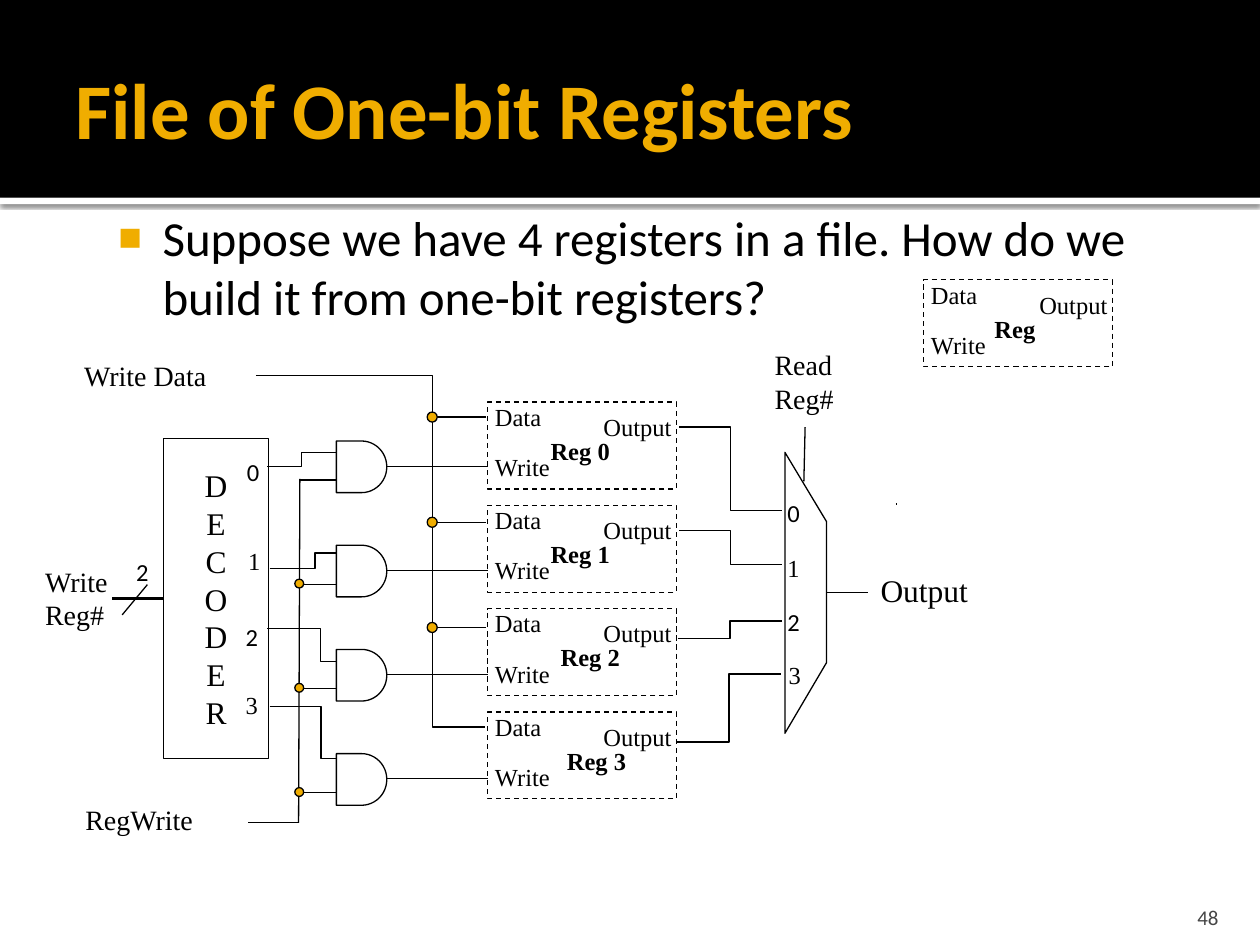
"""Build the slide on a file of four one-bit registers."""
from lxml.etree import SubElement
from pptx import Presentation
from pptx.dml.color import RGBColor
from pptx.enum.dml import MSO_LINE
from pptx.enum.shapes import MSO_CONNECTOR, MSO_SHAPE
from pptx.enum.text import MSO_ANCHOR, MSO_AUTO_SIZE, PP_ALIGN
from pptx.oxml.ns import qn
from pptx.util import Inches, Pt

BLACK, WHITE, GOLD, GREY = "000000", "FFFFFF", "F0AD00", "454545"
SERIF, SANS = "Times New Roman", "Calibri"
LEFT, MID, RIGHT = PP_ALIGN.LEFT, PP_ALIGN.CENTER, PP_ALIGN.RIGHT


def paint(fill, color):
    fill.solid()
    fill.fore_color.rgb = RGBColor.from_string(color)


def write(frame, text, size, font=SERIF, color=BLACK, bold=False, align=LEFT):
    for i, line in enumerate(text.split("\n")):
        para = frame.paragraphs[0] if i == 0 else frame.add_paragraph()
        para.alignment = align
        run = para.add_run()
        run.text = line
        run.font.size = Pt(size)
        run.font.name = font
        run.font.bold = bold
        paint(run.font.fill, color)


deck = Presentation()
deck.slide_width, deck.slide_height = Inches(10), Inches(7.5)
slide = deck.slides.add_slide(deck.slide_layouts[1])
shapes = slide.shapes
title, body = slide.placeholders

for top, high, color in [(0, 1.57, BLACK), (1.57, 0.05, WHITE)]:
    band = shapes.add_shape(MSO_SHAPE.RECTANGLE, 0, Inches(top), Inches(10), Inches(high))
    paint(band.fill, color)
    band.line.fill.background()
    band.shadow.inherit = False
    shapes._spTree.insert(2, band._element)
glow = SubElement(band._element.spPr.find(qn("a:effectLst")), qn("a:outerShdw"),
                  blurRad=str(Pt(2.5)), dist=str(Pt(0.8)), dir="5400000")
tint = SubElement(glow, qn("a:srgbClr"), val=BLACK)
SubElement(tint, qn("a:alpha"), val="60000")

title.left, title.top, title.width, title.height = [Inches(v) for v in (0.5, 0.17, 9, 1.37)]
title.text_frame.margin_right = Inches(0.05)
title.text_frame.vertical_anchor = MSO_ANCHOR.MIDDLE
write(title.text_frame, "File of One-bit Registers", 45, SANS, GOLD, True)

body.left, body.top, body.width, body.height = [Inches(v) for v in (0.75, 1.55, 8.5, 1.09)]
body.text_frame.margin_left = Inches(0.06)
body.text_frame.margin_top = Inches(0.1)
write(body.text_frame, "Suppose we have 4 registers in a file. How do we build it from one-bit registers?", 28, SANS)
para = body.text_frame.paragraphs[0]
para.space_before = Pt(0)
props = para._p.get_or_add_pPr()
props.set("marL", str(Inches(0.48)))
props.set("indent", str(Inches(-0.35)))
SubElement(SubElement(props, qn("a:buClr")), qn("a:srgbClr"), val=GOLD)
SubElement(props, qn("a:buSzPct"), val="80000")
SubElement(props, qn("a:buChar"), char="■")

labels = [
    (6.89, 4.48, 0.9, 0.4, "Output", 18, False, LEFT),
    (6.05, 2.71, 0.67, 0.64, "Read\nReg#", 16, False, LEFT),
    (0.26, 4.43, 0.71, 0.64, "Write\nReg#", 16, False, LEFT),
    (0.57, 2.8, 1.18, 0.37, "Write Data", 16, False, LEFT),
    (0.58, 6.32, 1.07, 0.37, "RegWrite", 16, False, LEFT),
]
boxes = [(MSO_SHAPE.RECTANGLE, 1.3, 3.48, 0.83, 2.54, None, None)]
wires = [
    (7.11, 4, 7.12, 4, 0.75), (6.38, 3.82, 6.39, 3.39, 0.75), (6.56, 4.7, 6.89, 4.7, 0.75),
    (1.3, 4.75, 0.89, 4.75, 2.25), (1.17, 4.64, 0.97, 4.88, 0.75),
    (2.38, 3.8, 2.37, 6.53, 0.75), (2.37, 6.53, 1.97, 6.53, 0.75),
]
regs = [(3.87, 3.19 + 0.82 * i, f"Reg {i}", dx, 0.67) for i, dx in enumerate([0.4, 0.4, 0.48, 0.53])]
regs.append((7.33, 2.22, "Reg", 0.44, 0.57))
for x, y, name, dx, wide in regs:
    boxes.append((MSO_SHAPE.RECTANGLE, x, y, 1.5, 0.69, None, MSO_LINE.DASH))
    labels += [
        (x - 0.04, y - 0.05, 0.57, 0.33, "Data", 14, False, LEFT),
        (x - 0.04, y + 0.35, 0.64, 0.33, "Write", 14, False, LEFT),
        (x + 0.82, y + 0.03, 0.74, 0.33, "Output", 14, False, LEFT),
        (x + dx, y + 0.22, wide, 0.33, name, 14, True, MID),
    ]

for i in range(4):
    y = 3.5 + 0.827 * i
    boxes.append((MSO_SHAPE.FLOWCHART_DELAY, 2.67, y, 0.4, 0.41, None, None))
    wires += [(3.07, y + 0.2, 3.87, y + 0.2, 0.75), (2.67, y + 0.31, 2.38, y + 0.31, 0.75)]
    if i:
        boxes.append((MSO_SHAPE.OVAL, 2.34, y + 0.27, 0.07, 0.07, GOLD, None))
    if i < 3:
        y = 3.31 + 0.835 * i
        wires.append((3.43, y, 3.86, y, 0.75))
        boxes.append((MSO_SHAPE.OVAL, 3.39, y - 0.04, 0.08, 0.08, GOLD, None))

bends = [
    (5.39, 3.39, 6.21, 4.05, 0.5), (5.39, 4.21, 6.21, 4.48, 0.5),
    (5.38, 5.07, 6.21, 4.93, 0.5), (5.37, 5.89, 6.2, 5.35, 0.5),
    (2.03, 2.98, 3.85, 5.77, 0.77),
    (2.12, 3.7, 2.67, 3.59, 0.5), (2.14, 4.51, 2.67, 4.39, 0.68),
    (2.12, 4.99, 2.67, 5.25, 0.77), (2.14, 5.61, 2.67, 6.02, 0.77),
]
paths = [(MSO_CONNECTOR.STRAIGHT, *wire, None) for wire in wires]
paths += [(MSO_CONNECTOR.ELBOW, *bend[:4], 0.75, bend[4]) for bend in bends]
for kind, *ends, width, turn in paths:
    link = shapes.add_connector(kind, *[Inches(v) for v in ends])
    paint(link.line.fill, BLACK)
    link.line.width = Pt(width)
    SubElement(link._element.spPr, qn("a:effectLst"))
    if turn:
        guides = link._element.spPr.find(qn("a:prstGeom")).find(qn("a:avLst"))
        SubElement(guides, qn("a:gd"), name="adj1", fmla=f"val {round(turn * 100000)}")

pen = shapes.build_freeform(Inches(6.23), Inches(5.82))
pen.add_line_segments([(Inches(x), Inches(y)) for x, y in [(6.56, 5.26), (6.56, 4.14), (6.23, 3.59)]])
forms = [(pen.convert_to_shape(), None, None)]
for kind, *place, color, dash in boxes:
    forms.append((shapes.add_shape(kind, *[Inches(v) for v in place]), color, dash))
for form, color, dash in forms:
    form.shadow.inherit = False
    if color:
        paint(form.fill, color)
    else:
        form.fill.background()
    paint(form.line.fill, BLACK)
    form.line.width = Pt(0.75)
    if dash:
        form.line.dash_style = dash

coder = forms[1][0].text_frame
coder.word_wrap = False
coder.vertical_anchor = MSO_ANCHOR.MIDDLE
write(coder, "\n".join("DECODER"), 18, align=MID)

for *place, text, size, bold, align in labels:
    frame = shapes.add_textbox(*[Inches(v) for v in place]).text_frame
    frame.word_wrap = False
    frame.auto_size = MSO_AUTO_SIZE.SHAPE_TO_FIT_TEXT
    write(frame, text, size, bold=bold, align=align)

digits = [
    (6.25, 3.95, "0", SANS), (6.25, 4.39, "1", SERIF), (6.25, 4.82, "2", SANS), (6.26, 5.24, "3", SERIF),
    (1.96, 3.63, "0", SANS), (1.97, 4.33, "1", SERIF), (1.95, 4.94, "2", SANS), (1.95, 5.48, "3", SERIF),
    (1.08, 4.42, "2", SANS),
]
for x, y, text, font in digits:
    frame = shapes.add_textbox(Inches(x), Inches(y), Inches(0.14), Inches(0.17)).text_frame
    frame.margin_left = frame.margin_right = frame.margin_top = frame.margin_bottom = 0
    frame.word_wrap = True
    write(frame, text, 14, font)

page = shapes.add_textbox(Inches(8.97), Inches(7.08), Inches(0.8), Inches(0.3)).text_frame
page.word_wrap = True
page.margin_bottom = 0
page.vertical_anchor = MSO_ANCHOR.BOTTOM
write(page, "48", 12, SANS, GREY, align=RIGHT)

deck.save("out.pptx")
